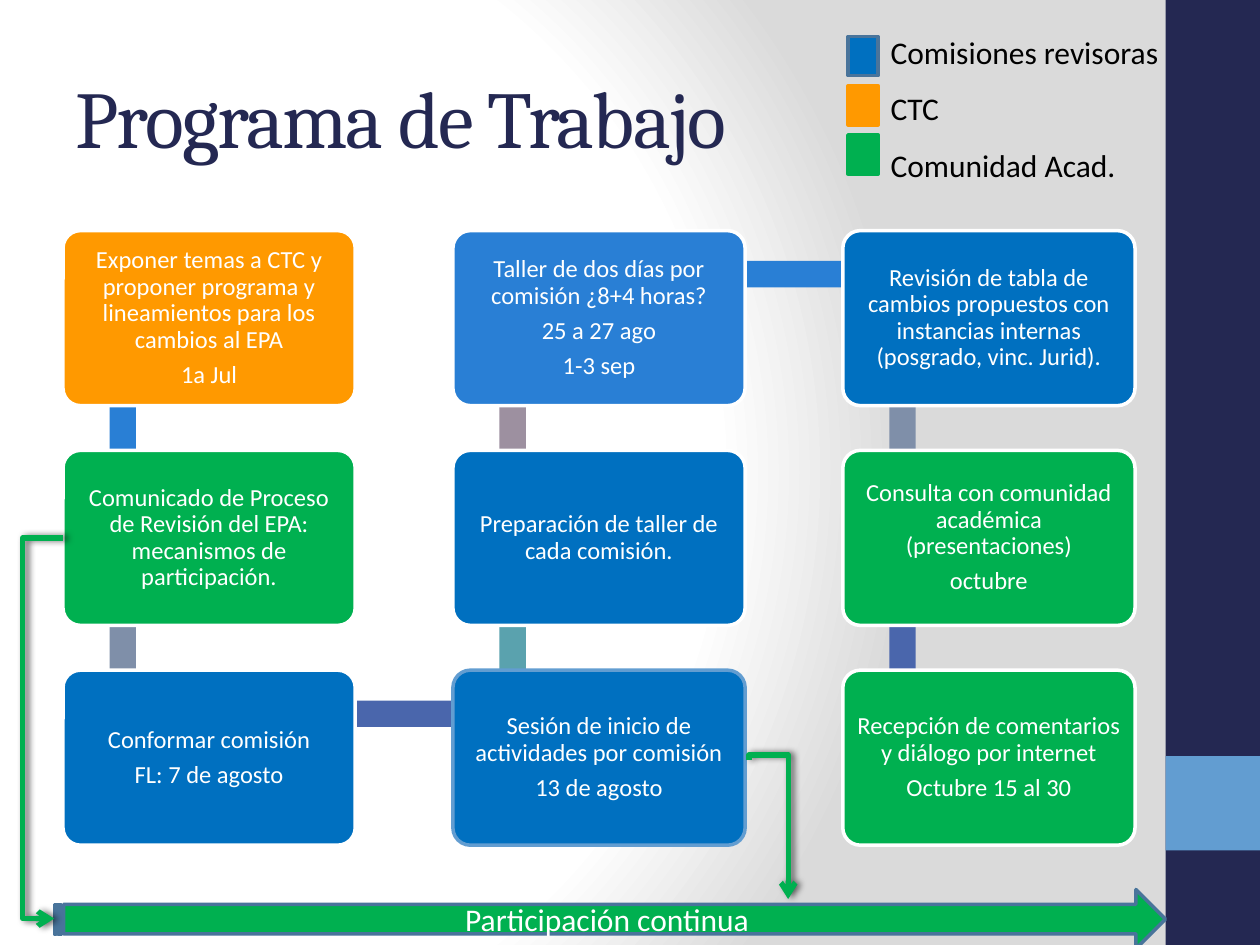
"""Build the "Programa de Trabajo" slide: a winding path of cards, a legend and a timeline arrow."""
from dataclasses import dataclass
from itertools import zip_longest
from typing import NamedTuple, Optional

from pptx import Presentation as Deck
from pptx.dml.color import RGBColor as Color
from pptx.enum.shapes import MSO_CONNECTOR as Joint, MSO_SHAPE as Form
from pptx.enum.text import MSO_ANCHOR as Anchor, PP_ALIGN as Align
from pptx.oxml import parse_xml as to_xml
from pptx.oxml.ns import nsdecls as names
from pptx.util import Pt


@dataclass(frozen=True)
class Theme:
    navy: str = "242852"
    sky: str = "629DD1"
    blue: str = "0070C0"
    azure: str = "297FD5"
    orange: str = "FF9900"
    green: str = "00B050"
    slate: str = "7F8FA9"
    indigo: str = "4A66AC"
    teal: str = "5AA2AE"
    mauve: str = "9D90A0"
    steel: str = "49749B"
    white: str = "FFFFFF"
    gray: str = "DADADA"
    black: str = "000000"
    head: str = "Cambria"
    body: str = "Calibri"
    title: float = 46
    label: float = 18
    small: float = 14


class Rect(NamedTuple):
    x: float
    y: float
    w: float
    h: float


class Card(NamedTuple):
    col: int
    row: int
    fill: str
    lines: tuple[str, ...]
    link: Optional[str] = None
    edge: str = "FFFFFF"


class Key(NamedTuple):
    text: str
    fill: str
    edge: str
    space: float


class Arrow(NamedTuple):
    start: tuple[float, float]
    end: tuple[float, float]
    bend: float
    turn: int = 0


T = Theme()
LEFT, TOP = 36, 131.8
STEP_X, STEP_Y = 222.8, 125.6
CARD_W, CARD_H = 167, 100
BAR = 15.1

CARDS = (
    Card(0, 0, T.orange, ("Exponer temas a CTC y proponer programa y lineamientos para los cambios al EPA",
                          "1a Jul"), T.azure),
    Card(0, 1, T.green, ("Comunicado de Proceso de Revisión del EPA: mecanismos de participación.",), T.slate),
    Card(0, 2, T.blue, ("Conformar comisión", "FL: 7 de agosto"), T.indigo),
    Card(1, 2, T.blue, ("Sesión de inicio de actividades por comisión", "13 de agosto"), T.teal, T.sky),
    Card(1, 1, T.blue, ("Preparación de taller de cada comisión.",), T.mauve),
    Card(1, 0, T.azure, ("Taller de dos días por comisión ¿8+4 horas?", "25 a 27 ago", "1-3 sep"), T.azure),
    Card(2, 0, T.blue, ("Revisión de tabla de cambios propuestos con instancias internas "
                        "(posgrado, vinc. Jurid).",), T.slate),
    Card(2, 1, T.green, ("Consulta con comunidad académica (presentaciones)", "octubre"), T.indigo),
    Card(2, 2, T.green, ("Recepción de comentarios y diálogo por internet", "Octubre 15 al 30")),
)
KEYS = (
    Key("Comisiones revisoras", T.blue, T.steel, 1),
    Key("CTC", T.orange, T.orange, 1.5),
    Key("Comunidad Acad.", T.green, T.green, 1.5),
)
ARROWS = (
    Arrow((36, 307.4), (31, 524.9), 4.6),
    Arrow((478.8, 463), (399.6, 485.3), -0.04, 270),
)


def paint(slide) -> None:
    stops = "".join(f'<a:gs pos="{at * 1000}"><a:srgbClr val="{tone}"/></a:gs>'
                    for at, tone in ((0, T.white), (75, T.white), (100, T.gray)))
    slide._element.cSld.insert(0, to_xml(
        f'<p:bg {names("p", "a")}><p:bgPr><a:gradFill rotWithShape="1"><a:gsLst>{stops}</a:gsLst>'
        '<a:path path="circle"><a:fillToRect l="20000" t="50000" r="100000" b="50000"/></a:path>'
        '</a:gradFill><a:effectLst/></p:bgPr></p:bg>'))


def box(slide, form: Form, rect: Rect, fill: str, edge: Optional[str] = None):
    shape = slide.shapes.add_shape(form, *map(Pt, rect))
    shape.shadow.inherit = False
    shape.fill.solid()
    shape.fill.fore_color.rgb = Color.from_string(fill)
    if edge:
        shape.line.color.rgb = Color.from_string(edge)
        shape.line.width = Pt(2)
    else:
        shape.line.fill.background()
    return shape


def write(para, text: str, size: float, tone: str, face: str = T.body):
    run = para.add_run()
    run.text = text
    run.font.size, run.font.name = Pt(size), face
    run.font.color.rgb = Color.from_string(tone)
    return run


def add_para(frame, first: bool):
    return frame.paragraphs[0] if first else frame.add_paragraph()


def draw_link(slide, card: Card, goal: Card) -> None:
    x = LEFT + STEP_X * card.col
    y = TOP + STEP_Y * min(card.row, goal.row)
    if card.col == goal.col:
        rect = Rect(x + 26.6, y + 25, BAR, 124.6)
    else:
        rect = Rect(x + 34.6, y + 17.3, 221.8, BAR)
    box(slide, Form.RECTANGLE, rect, card.link)


def draw_card(slide, card: Card) -> None:
    rect = Rect(LEFT + STEP_X * card.col, TOP + STEP_Y * card.row, CARD_W, CARD_H)
    shape = box(slide, Form.ROUNDED_RECTANGLE, rect, card.fill, card.edge)
    shape.adjustments[0] = 0.1
    frame = shape.text_frame
    frame.word_wrap, frame.vertical_anchor = True, Anchor.MIDDLE
    frame.margin_left = frame.margin_right = frame.margin_top = frame.margin_bottom = Pt(4.2)
    for spot, line in enumerate(card.lines):
        para = add_para(frame, spot == 0)
        para.alignment, para.line_spacing, para.space_after = Align.CENTER, 0.9, Pt(4.9)
        write(para, line, T.small, T.white)


def draw_arrow(slide, arrow: Arrow) -> None:
    line = slide.shapes.add_connector(Joint.ELBOW, *map(Pt, arrow.start + arrow.end))
    line.line.color.rgb = Color.from_string(T.green)
    line.line.width = Pt(3)
    props = line._element.spPr
    props.xfrm.set("rot", str(arrow.turn * 60000))
    bends = props.prstGeom.get_or_add_avLst()
    bends.append(to_xml(f'<a:gd {names("a")} name="adj1" fmla="val {round(arrow.bend * 100000)}"/>'))
    props.ln.append(to_xml(f'<a:tailEnd {names("a")} type="arrow"/>'))
    props.append(to_xml(
        f'<a:effectLst {names("a")}><a:outerShdw blurRad="{Pt(4)}" dist="{Pt(2)}" dir="0">'
        f'<a:srgbClr val="{T.black}"><a:alpha val="60000"/></a:srgbClr></a:outerShdw></a:effectLst>'))


def draw_title(slide) -> None:
    frame = slide.shapes.add_textbox(*map(Pt, Rect(36, 21.6, 600, 90))).text_frame
    frame.word_wrap, frame.vertical_anchor = True, Anchor.MIDDLE
    run = write(frame.paragraphs[0], "Programa de Trabajo", T.title, T.navy, T.head)
    run._r.get_or_add_rPr().set("spc", "-100")


def draw_band(slide) -> None:
    band = box(slide, Form.STRIPED_RIGHT_ARROW, Rect(31, 508.3, 635, 33.8), T.green, T.steel)
    band.text_frame.vertical_anchor = Anchor.MIDDLE
    para = band.text_frame.paragraphs[0]
    para.alignment = Align.CENTER
    write(para, "Participación continua", T.label, T.white)


def draw_keys(slide) -> None:
    for spot, key in enumerate(KEYS):
        box(slide, Form.RECTANGLE, Rect(484.6, 20.9 + 28.1 * spot, 17.3, 22.3), key.fill, key.edge)
    frame = slide.shapes.add_textbox(*map(Pt, Rect(501.8, 15.1, 169.2, 116.6))).text_frame
    frame.word_wrap = False
    for spot, key in enumerate(KEYS):
        para = add_para(frame, spot == 0)
        para.line_spacing = key.space
        write(para, key.text, T.label, T.black)


def main() -> None:
    deck = Deck()
    deck.slide_width, deck.slide_height = Pt(720), Pt(540)
    slide = deck.slides.add_slide(deck.slide_layouts[6])
    paint(slide)
    box(slide, Form.RECTANGLE, Rect(666, 0, 54, 540), T.navy)
    box(slide, Form.RECTANGLE, Rect(666, 432, 54, 54), T.sky)
    draw_title(slide)
    for card, goal in zip_longest(CARDS, CARDS[1:]):
        if goal:
            draw_link(slide, card, goal)
        draw_card(slide, card)
    draw_band(slide)
    for arrow in ARROWS:
        draw_arrow(slide, arrow)
    draw_keys(slide)
    deck.save("out.pptx")


if __name__ == "__main__":
    main()
